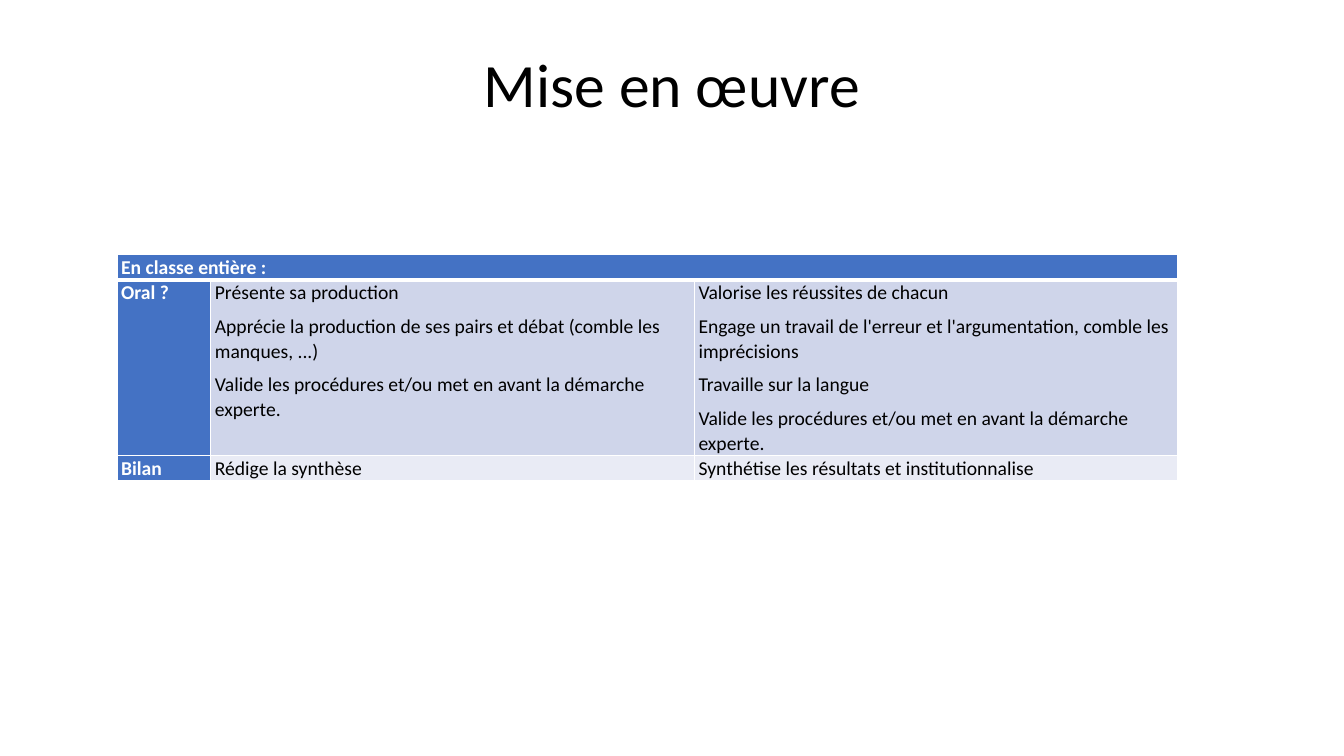
"""Build the slide "Mise en œuvre" with its classroom table."""
from lxml.etree import SubElement
from pptx import Presentation
from pptx.dml.color import RGBColor
from pptx.enum.text import MSO_ANCHOR, PP_ALIGN
from pptx.oxml.ns import qn
from pptx.util import Pt

WHITE, BLACK, BLUE = "FFFFFF", "000000", "4472C4"
ROW_FILLS = [BLUE, "CFD5EA", "E9EBF5"]
COLUMN_WIDTHS = [67, 345.5, 345.5]
ROW_HEIGHTS = [17.5, 124, 17.5]
ROWS = [
    [["En classe entière :"], [], []],
    [
        ["Oral ?"],
        [
            "Présente sa production",
            "Apprécie la production de ses pairs et débat (comble les manques, ...)",
            "Valide les procédures et/ou met en avant la démarche experte.",
        ],
        [
            "Valorise les réussites de chacun",
            "Engage un travail de l'erreur et l'argumentation, comble les imprécisions",
            "Travaille sur la langue",
            "Valide les procédures et/ou met en avant la démarche experte.",
        ],
    ],
    [["Bilan"], ["Rédige la synthèse"], ["Synthétise les résultats et institutionnalise"]],
]


def color(value):
    """Return the colour for a hex string."""
    return RGBColor.from_string(value)


class SlideBuilder:
    """Hold the text style and the current slide."""

    font = "Calibri"
    title_size = 44
    table_size = 14

    def __init__(self, presentation):
        """Add a title-only slide."""
        self.slide = presentation.slides.add_slide(presentation.slide_layouts[5])

    def run(self, paragraph, text, size, text_color, bold=False):
        """Add one formatted run."""
        run = paragraph.add_run()
        run.text = text
        run.font.name = self.font
        run.font.size = Pt(size)
        run.font.bold = bold
        run.font.color.rgb = color(text_color)

    def title(self, text, left, top, width, height):
        """Place and fill the title placeholder."""
        shape = self.slide.shapes.title
        shape.left, shape.top, shape.width, shape.height = map(Pt, (left, top, width, height))
        shape.text_frame.vertical_anchor = MSO_ANCHOR.MIDDLE
        paragraph = shape.text_frame.paragraphs[0]
        paragraph.alignment = PP_ALIGN.CENTER
        paragraph.line_spacing = 0.9
        self.run(paragraph, text, self.title_size, BLACK)

    def borders(self, cell, top, bottom):
        """Draw white borders around a cell."""
        properties = cell._tc.get_or_add_tcPr()
        for side, width in (("L", 1), ("R", 1), ("T", top), ("B", bottom)):
            line = SubElement(properties, qn(f"a:ln{side}"), w=str(Pt(width)))
            fill = SubElement(line, qn("a:solidFill"))
            SubElement(fill, qn("a:srgbClr"), val=WHITE)

    def cell(self, cell, texts, fill, heading):
        """Fill a cell with its paragraphs."""
        cell.margin_left = cell.margin_right = Pt(3)
        cell.margin_top = cell.margin_bottom = Pt(0)
        cell.fill.solid()
        cell.fill.fore_color.rgb = color(fill)
        for index, text in enumerate(texts):
            frame = cell.text_frame
            paragraph = frame.add_paragraph() if index else frame.paragraphs[0]
            paragraph.line_spacing = 1.05
            paragraph.space_after = Pt(6)
            self.run(paragraph, text, self.table_size, WHITE if heading else BLACK, heading)

    def table(self, rows, left, top):
        """Add the table with a merged header row and a heading column."""
        table = self.slide.shapes.add_table(
            len(rows), len(COLUMN_WIDTHS), Pt(left), Pt(top),
            Pt(sum(COLUMN_WIDTHS)), Pt(sum(ROW_HEIGHTS)),
        ).table
        table.first_col = True
        table.horz_banding = False
        for column, width in zip(table.columns, COLUMN_WIDTHS):
            column.width = Pt(width)
        for row, height in zip(table.rows, ROW_HEIGHTS):
            row.height = Pt(height)
        table.cell(0, 0).merge(table.cell(0, len(COLUMN_WIDTHS) - 1))
        for row_index, row in enumerate(rows):
            for column_index, texts in enumerate(row):
                cell = table.cell(row_index, column_index)
                heading = row_index == 0 or column_index == 0
                self.borders(cell, 3 if row_index == 1 else 1, 3 if row_index == 0 else 1)
                self.cell(cell, texts, BLUE if heading else ROW_FILLS[row_index], heading)


def main():
    """Create and save the presentation."""
    presentation = Presentation()
    presentation.slide_width, presentation.slide_height = Pt(960), Pt(540)
    builder = SlideBuilder(presentation)
    builder.title("Mise en œuvre", 66, 29, 828, 67)
    builder.table(ROWS, 83.5, 182)
    presentation.save("out.pptx")


if __name__ == "__main__":
    main()
